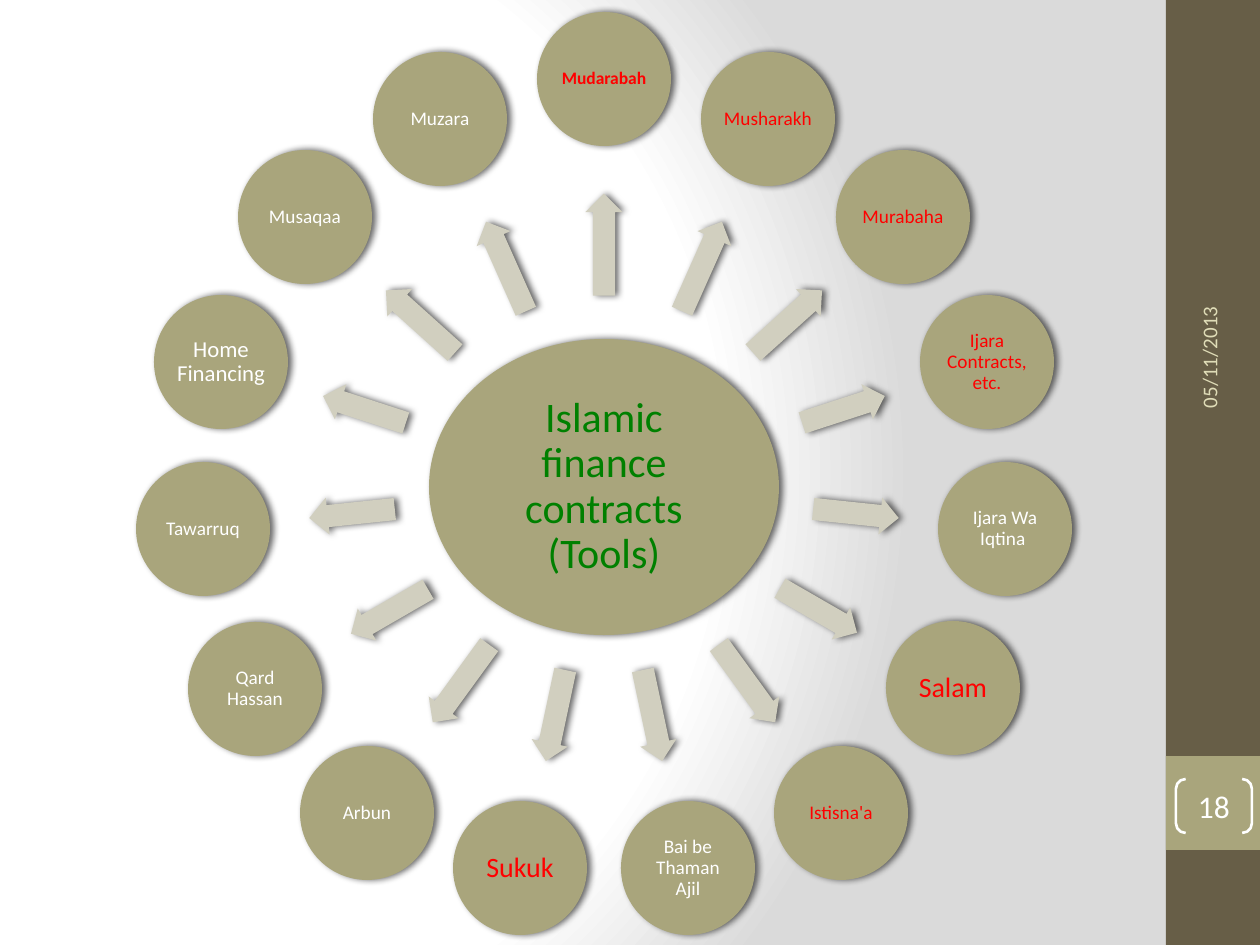
from dataclasses import dataclass
from math import cos, radians, sin

from pptx import Presentation
from pptx.dml.color import RGBColor
from pptx.enum.shapes import MSO_SHAPE
from pptx.enum.text import MSO_ANCHOR, PP_ALIGN
from pptx.oxml import parse_xml
from pptx.oxml.ns import nsdecls, qn
from pptx.util import Pt

OVAL, ARROW = MSO_SHAPE.OVAL, MSO_SHAPE.RIGHT_ARROW
RECT, PAIR = MSO_SHAPE.RECTANGLE, MSO_SHAPE.DOUBLE_BRACKET
MIDDLE = MSO_ANCHOR.MIDDLE
LEFT, CENTER = PP_ALIGN.LEFT, PP_ALIGN.CENTER

PX = 914400 // 126
FONT = "Calibri"
HEX = {"bar": "675E47", "olive": "A9A57C", "arrow": "D1CFBF", "red": "FF0000",
       "green": "008000", "white": "FFFFFF", "date": "DFDCB7",
       "shade": "DADADA", "black": "000000"}

# Ring around the hub, in px
MID_X, MID_Y = 604, 487
RADIUS, NODE = 403, 134
HUB_W, HUB_H, THICK = 350, 296, 37


@dataclass
class Node:
    text: str
    color: str = "white"
    size: int = 11
    bold: bool = False
    shift: int = 0


@dataclass
class Spoke:
    length: int
    reach: int


# Clockwise from the top
NODES = [
    Node("Mudarabah", "red", 10, True, shift=-5),
    Node("Musharakh", "red"),
    Node("Murabaha", "red"),
    Node("Ijara Contracts, etc.", "red"),
    Node("Ijara Wa Iqtina "),
    Node("Salam", "red", 16),
    Node("Istisna'a", "red"),
    Node("Bai be Thaman Ajil", shift=-13),
    Node("Sukuk", "red", 16, shift=-13),
    Node("Arbun"),
    Node("Qard Hassan"),
    Node("Tawarruq"),
    Node("Home Financing", size=13),
    Node("Musaqaa"),
    Node("Muzara"),
]
# Top to bottom; the left half mirrors the right
SPOKES = [Spoke(102, 242), Spoke(98, 241), Spoke(93, 247), Spoke(87, 252),
          Spoke(86, 253), Spoke(89, 248), Spoke(96, 243), Spoke(93, 234)]


def rgb(name: str) -> RGBColor:
    return RGBColor.from_string(HEX[name])


def add_form(slide, kind, x: int, y: int, w: int, h: int, fill: str = ""):
    form = slide.shapes.add_shape(kind, x * PX, y * PX, w * PX, h * PX)
    form.shadow.inherit = False
    form.line.fill.background()
    if fill:
        form.fill.solid()
        form.fill.fore_color.rgb = rgb(fill)
    else:
        form.fill.background()
    return form


def add_round(slide, kind, x: float, y: float, w: int, h: int, fill: str):
    """Add a shadowed shape centred on x, y."""
    form = add_form(slide, kind, round(x - w / 2), round(y - h / 2), w, h, fill)
    form._element.spPr.find(qn("a:effectLst")).append(parse_xml(
        f'<a:outerShdw {nsdecls("a")} blurRad="{Pt(4)}" dist="{Pt(2)}" dir="0">'
        f'<a:srgbClr val="{HEX["black"]}"><a:alpha val="60000"/></a:srgbClr>'
        '</a:outerShdw>'))
    return form


def set_text(form, text: str, size: int, color: str, bold: bool = False,
             inset: int = 2, align=CENTER, space: float = 1.0) -> None:
    frame = form.text_frame
    frame.text = text
    frame.word_wrap = True
    frame.vertical_anchor = MIDDLE
    frame.margin_left = frame.margin_right = inset * PX
    frame.margin_top = frame.margin_bottom = inset * PX
    para = frame.paragraphs[0]
    para.alignment = align
    para.line_spacing = space
    font = para.runs[0].font
    font.name, font.size, font.bold = FONT, Pt(size), bold
    font.color.rgb = rgb(color)


def set_back(slide) -> None:
    stops = "".join(
        f'<a:gs pos="{pos * 1000}"><a:srgbClr val="{HEX[name]}"/></a:gs>'
        for pos, name in ((0, "white"), (75, "white"), (100, "shade")))
    slide._element.cSld.insert(0, parse_xml(
        f'<p:bg {nsdecls("p", "a")}><p:bgPr><a:gradFill rotWithShape="1">'
        f'<a:gsLst>{stops}</a:gsLst><a:path path="circle">'
        '<a:fillToRect l="20000" t="50000" r="100000" b="50000"/></a:path>'
        '</a:gradFill><a:effectLst/></p:bgPr></p:bg>'))


def add_ring(slide) -> None:
    count = len(NODES)
    for i, node in enumerate(NODES):
        turn = 360 * i / count
        dx, dy = sin(radians(turn)), -cos(radians(turn))
        spoke = SPOKES[min(i, count - i)]
        arrow = add_round(slide, ARROW, MID_X + spoke.reach * dx,
                          MID_Y + spoke.reach * dy, spoke.length, THICK, "arrow")
        arrow.adjustments[0], arrow.adjustments[1] = 0.6, 0.5
        arrow.rotation = (turn - 90) % 360
        disc = add_round(slide, OVAL, MID_X + RADIUS * dx,
                         MID_Y + RADIUS * dy + node.shift, NODE, NODE, "olive")
        set_text(disc, node.text, node.size, node.color, node.bold, space=0.9)


def main() -> None:
    deck = Presentation()
    deck.slide_width, deck.slide_height = 1260 * PX, 945 * PX
    slide = deck.slides.add_slide(deck.slide_layouts[6])
    set_back(slide)

    # Side bar
    add_form(slide, RECT, 1166, 0, 94, 945, "bar")
    add_form(slide, RECT, 1166, 756, 94, 94, "olive")

    # Hub and ring
    hub = add_round(slide, OVAL, MID_X, MID_Y, HUB_W, HUB_H, "olive")
    set_text(hub, "Islamic finance contracts (Tools)", 24, "green",
             inset=4, space=0.9)
    add_ring(slide)

    # Slide number
    pair = add_form(slide, PAIR, 1176, 779, 76, 54)
    pair.adjustments[0] = 0.18
    pair.line.color.rgb = rgb("white")
    pair.line.width = Pt(1.5)
    set_text(pair, "18", 18, "white", inset=0)

    # Date
    date = slide.shapes.add_textbox(1041 * PX, 227 * PX, 336 * PX, 50 * PX)
    date.rotation = 270
    set_text(date, "05/11/2013", 12, "date", inset=12, align=LEFT)

    deck.save("out.pptx")


if __name__ == "__main__":
    main()
